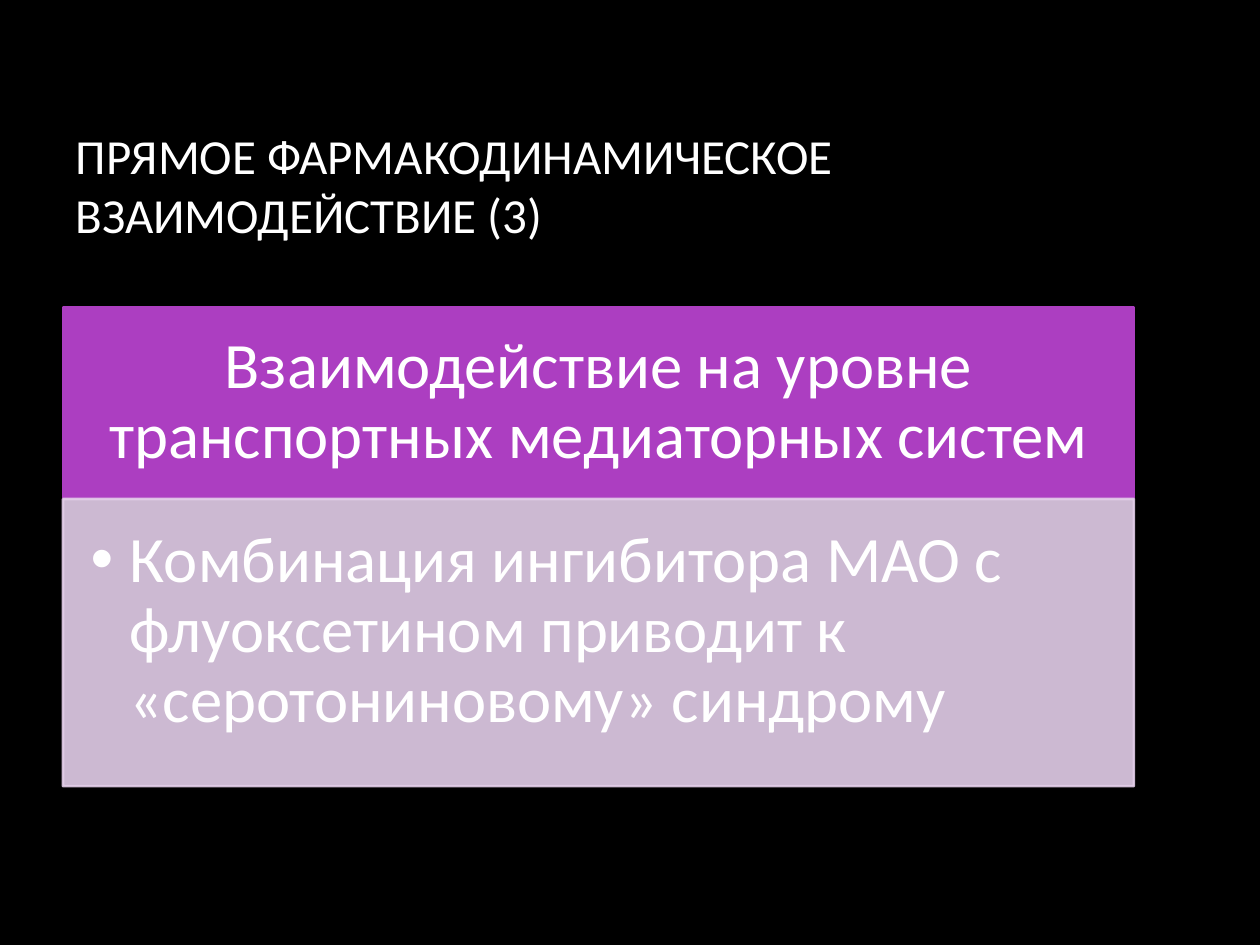
from dataclasses import dataclass
from typing import Optional

from lxml.etree import SubElement
from pptx import Presentation
from pptx.dml.color import RGBColor
from pptx.enum.shapes import MSO_SHAPE
from pptx.enum.text import MSO_ANCHOR, MSO_AUTO_SIZE, PP_ALIGN
from pptx.oxml.ns import qn
from pptx.util import Inches, Pt

WIDE, HIGH = Inches(10), Inches(7.5)
LEFT, SPAN = 0.05, 0.85


@dataclass(frozen=True)
class Theme:
    font: str = "Calibri"
    back: str = "000000"
    ink: str = "FFFFFF"
    head: str = "AC3EC1"
    body: str = "E3CEE9"
    title: int = 28
    text: int = 37
    edge: float = 1.5


@dataclass(frozen=True)
class Panel:
    text: str
    top: float
    tall: float
    fill: str
    inset: tuple
    anchor: MSO_ANCHOR
    align: PP_ALIGN
    after: float
    alpha: int = 100
    bullet: Optional[str] = None


THEME = Theme()
PANELS = [
    Panel("Взаимодействие на уровне транспортных медиаторных систем",
          2.44 / 7.5, 1.51 / 7.5, THEME.head, (0.29, 0.16, 0.29, 0.16),
          MSO_ANCHOR.MIDDLE, PP_ALIGN.CENTER, 0.35),
    Panel("Комбинация ингибитора МАО с флуоксетином приводит к "
          "«серотониновому» синдрому",
          3.96 / 7.5, 2.28 / 7.5, THEME.body, (0.22, 0.22, 0.29, 0.32),
          MSO_ANCHOR.TOP, PP_ALIGN.LEFT, 0.15, 90, "•"),
]


def place(shape, top: float, tall: float) -> None:
    shape.left, shape.width = int(WIDE * LEFT), int(WIDE * SPAN)
    shape.top, shape.height = int(HIGH * top), int(HIGH * tall)


def write(para, text: str, size: int) -> None:
    run = para.add_run()
    run.text = text
    run.font.name = THEME.font
    run.font.size = Pt(size)
    run.font.color.rgb = RGBColor.from_string(THEME.ink)


def fade(shape, alpha: int) -> None:
    for tint in shape._element.spPr.iter(qn("a:srgbClr")):
        SubElement(tint, qn("a:alpha"), val=str(alpha * 1000))


def mark(para, sign: str) -> None:
    props = para._p.get_or_add_pPr()
    props.set("marL", str(Inches(0.31)))
    props.set("indent", str(-Inches(0.31)))
    SubElement(props, qn("a:buFont"), typeface="Arial")
    SubElement(props, qn("a:buChar"), char=sign)
    para.level = 1


def draw_panel(slide, panel: Panel) -> None:
    shape = slide.shapes.add_shape(MSO_SHAPE.RECTANGLE, 0, 0, 0, 0)
    place(shape, panel.top, panel.tall)
    shape.shadow.inherit = False
    tint = RGBColor.from_string(panel.fill)
    shape.fill.solid()
    shape.fill.fore_color.rgb = tint
    shape.line.color.rgb = tint
    shape.line.width = Pt(THEME.edge)
    if panel.alpha < 100:
        fade(shape, panel.alpha)
    frame = shape.text_frame
    frame.word_wrap = True
    frame.vertical_anchor = panel.anchor
    (frame.margin_left, frame.margin_top,
     frame.margin_right, frame.margin_bottom) = map(Inches, panel.inset)
    para = frame.paragraphs[0]
    if panel.bullet:
        mark(para, panel.bullet)
    para.alignment = panel.align
    para.line_spacing = 0.9
    para.space_after = Pt(round(THEME.text * panel.after))
    write(para, panel.text, THEME.text)


def draw_title(slide, text: str) -> None:
    title = slide.shapes.title
    place(title, 0.67 / 7.5, 1.59 / 7.5)
    frame = title.text_frame
    frame.word_wrap = True
    frame.auto_size = MSO_AUTO_SIZE.NONE
    frame.vertical_anchor = MSO_ANCHOR.MIDDLE
    para = frame.paragraphs[0]
    para.alignment = PP_ALIGN.LEFT
    write(para, text, THEME.title)


def main() -> None:
    deck = Presentation()
    deck.slide_width, deck.slide_height = WIDE, HIGH
    slide = deck.slides.add_slide(deck.slide_layouts[5])
    slide.background.fill.solid()
    slide.background.fill.fore_color.rgb = RGBColor.from_string(THEME.back)
    draw_title(slide, "ПРЯМОЕ ФАРМАКОДИНАМИЧЕСКОЕ ВЗАИМОДЕЙСТВИЕ (3)")
    for panel in PANELS:
        draw_panel(slide, panel)
    deck.save("out.pptx")


if __name__ == "__main__":
    main()
